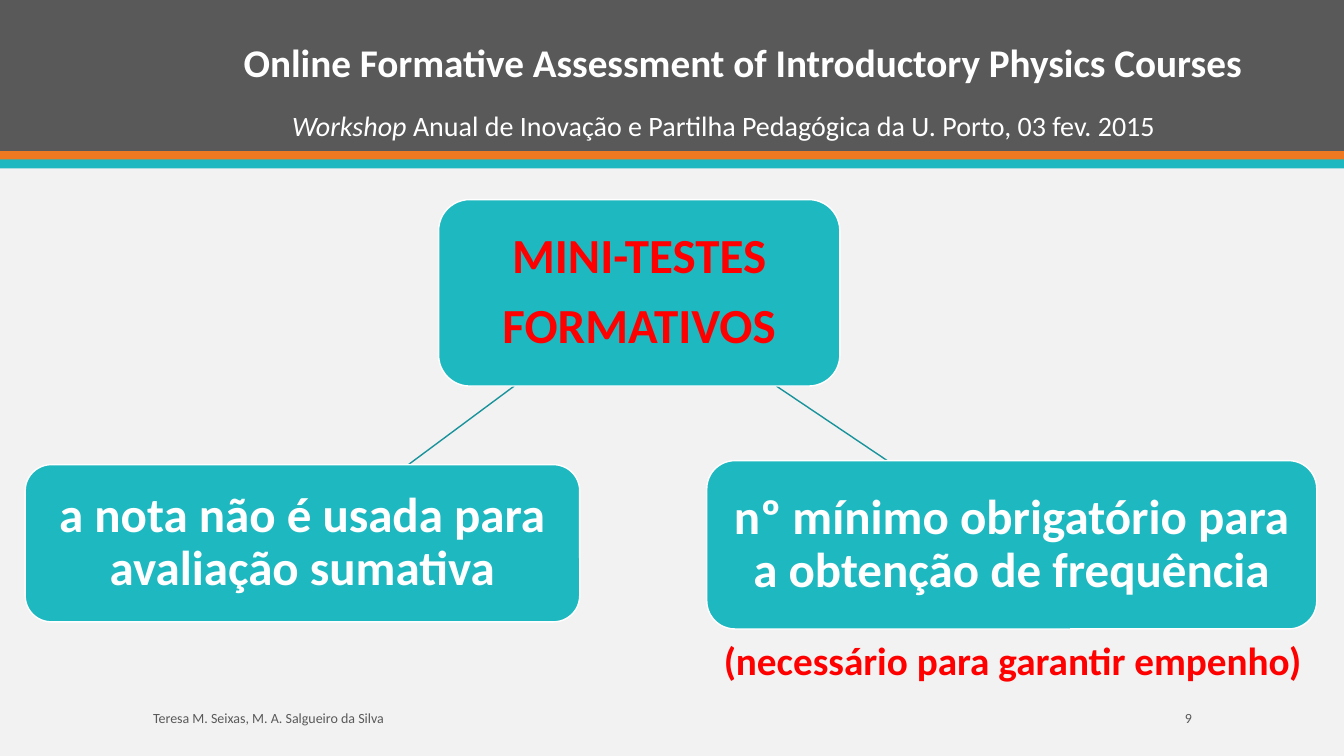
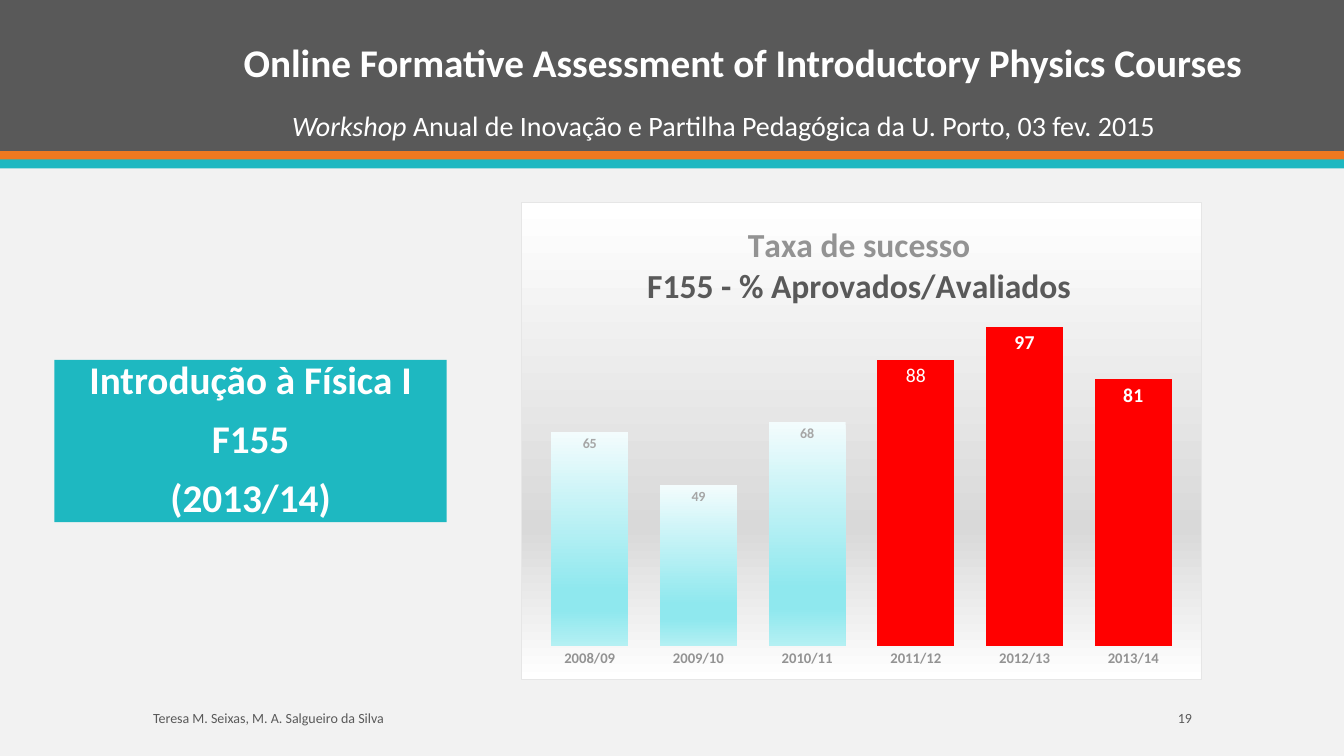
from dataclasses import dataclass

from pptx import Presentation
from pptx.chart.data import CategoryChartData
from pptx.dml.color import RGBColor
from pptx.enum.chart import XL_CHART_TYPE, XL_LABEL_POSITION, XL_TICK_MARK
from pptx.enum.shapes import MSO_CONNECTOR, MSO_SHAPE
from pptx.enum.text import MSO_ANCHOR, PP_ALIGN
from pptx.oxml import parse_xml
from pptx.oxml.ns import nsdecls, qn
from pptx.util import Inches, Pt


@dataclass(frozen=True)
class Theme:
    font: str = "Calibri"
    page: str = "F2F2F2"
    dark: str = "595959"
    orange: str = "EF7920"
    teal: str = "1EB8C1"
    link: str = "18939B"
    white: str = "FFFFFF"
    red: str = "FF0000"
    axis: str = "939393"
    faded: str = "A6A6A6"
    border: str = "E6E6E6"
    panel: tuple = ((0, "FFFFFF"), (68, "D9D9D9"), (100, "FFFFFF"))
    pale_bar: tuple = ((0, "F3FCFD"), (74, "8FE8EE"), (83, "8FE8EE"), (100, "B4F0F3"))
    node: float = 35
    title: float = 28
    chart_title: float = 24
    subtitle: float = 20
    label: float = 14
    category: float = 10.5
    small: float = 10


T = Theme()

TITLE = "Online Formative Assessment of Introductory Physics Courses"
EVENT = ("Workshop", " Anual de Inovação e Partilha Pedagógica da U. Porto, 03 fev. 2015")
AUTHORS = "Teresa M. Seixas, M. A. Salgueiro da Silva"
BANDS = [(0, 1.5, T.dark), (1.5, 0.09, T.orange), (1.58, 0.09, T.teal)]

NODES = [
    ((4.35, 1.98, 3.98, 1.85), ["MINI-TESTES", "FORMATIVOS"], T.red),
    ((0.25, 4.61, 5.5, 1.56), ["a nota não é usada para avaliação sumativa"], T.white),
    ((7.01, 4.57, 6.05, 1.67), ["nº mínimo obrigatório para a obtenção de frequência"], T.white),
]
LINKS = [(5.1, 3.83, 4.05, 4.61), (7.7, 3.83, 8.8, 4.57)]
REMARK = "(necessário para garantir empenho)"

COURSE = ["Introdução à Física I", "F155", "(2013/14)"]
CHART_TITLE = [("Taxa de sucesso", T.axis), ("F155 - % Aprovados/Avaliados", T.dark)]
PASS_RATES = {"2008/09": 65, "2009/10": 49, "2010/11": 68,
              "2011/12": 87, "2012/13": 97, "2013/14": 81}
PALE_YEARS = 3
ROUNDED_LABELS = {3: "88"}


def style(font, size, color, bold=False, italic=False):
    font.name, font.size, font.bold, font.italic = T.font, Pt(size), bold, italic
    font.color.rgb = RGBColor.from_string(color)


def add_run(p, text, size, color, bold=False, italic=False):
    r = p.add_run()
    r.text = text
    style(r.font, size, color, bold, italic)


def write(sp, lines, size, color, bold=False, align=PP_ALIGN.LEFT,
          anchor=MSO_ANCHOR.MIDDLE, spacing=None, gap=0):
    """Fill a shape with one paragraph per line; gap separates paragraphs."""
    tf = sp.text_frame
    tf.word_wrap = True
    tf.vertical_anchor = anchor
    for i, line in enumerate(lines):
        p = tf.add_paragraph() if i else tf.paragraphs[0]
        p.alignment = align
        if spacing:
            p.line_spacing = spacing
        if i:
            p.space_before = Pt(gap)
        add_run(p, line, size, color, bold)


def add_text(s, box, *args, **kwargs):
    sp = s.shapes.add_textbox(*map(Inches, box))
    write(sp, *args, **kwargs)
    return sp


def add_block(s, kind, box, fill, line=None):
    sp = s.shapes.add_shape(kind, *map(Inches, box))
    sp.shadow.inherit = False
    sp.fill.solid()
    sp.fill.fore_color.rgb = RGBColor.from_string(fill)
    if line:
        sp.line.color.rgb = RGBColor.from_string(line)
        sp.line.width = Pt(1)
    else:
        sp.line.fill.background()
    return sp


def add_link(s, ends):
    link = s.shapes.add_connector(MSO_CONNECTOR.STRAIGHT, *map(Inches, ends))
    link.line.color.rgb = RGBColor.from_string(T.link)
    link.line.width = Pt(1)
    link.element.spPr.append(parse_xml(f"<a:effectLst {nsdecls('a')}/>"))


def add_base_slide(prs, number):
    s = prs.slides.add_slide(prs.slide_layouts[6])
    s.background.fill.solid()
    s.background.fill.fore_color.rgb = RGBColor.from_string(T.page)
    for top, height, color in BANDS:
        add_block(s, MSO_SHAPE.RECTANGLE, (0, top, 13.33, height), color)
    add_text(s, (1.44, 0.13, 11.85, 0.77), [TITLE], T.title, T.white, bold=True,
             align=PP_ALIGN.CENTER, anchor=MSO_ANCHOR.BOTTOM, spacing=0.9)
    event = add_text(s, (2.8, 1.03, 9.16, 0.44), [], T.subtitle, T.white,
                     anchor=MSO_ANCHOR.TOP)
    for text, italic in zip(EVENT, (True, False)):
        add_run(event.text_frame.paragraphs[0], text, T.subtitle, T.white, italic=italic)
    add_text(s, (1.42, 6.97, 6.38, 0.3), [AUTHORS], T.small, T.dark)
    add_text(s, (10.42, 6.97, 1.5, 0.3), [str(number)], T.small, T.dark,
             align=PP_ALIGN.RIGHT)
    return s


def gradient_xml(stops):
    """Top-to-bottom gradient from (percent, colour) stops."""
    marks = "".join(f'<a:gs pos="{pos * 1000}"><a:srgbClr val="{color}"/></a:gs>'
                    for pos, color in stops)
    return (f"<a:gradFill {nsdecls('a')}><a:gsLst>{marks}</a:gsLst>"
            '<a:lin ang="5400000" scaled="0"/></a:gradFill>')


def set_layout(parent, index, **fractions):
    """Place a chart part by fractions of the chart area."""
    old = parent.find(qn("c:layout"))
    if old is not None:
        parent.remove(old)
    target = '<c:layoutTarget val="inner"/>' if "w" in fractions else ""
    modes = "".join(f'<c:{k}Mode val="edge"/>' for k in "xy")
    values = "".join(f'<c:{k} val="{v}"/>' for k, v in fractions.items())
    parent.insert(index, parse_xml(
        f"<c:layout {nsdecls('c')}><c:manualLayout>{target}{modes}{values}"
        "</c:manualLayout></c:layout>"))


def style_axes(chart):
    cat = chart.category_axis
    cat.major_tick_mark = XL_TICK_MARK.NONE
    cat.format.line.fill.background()
    style(cat.tick_labels.font, T.category, T.axis, bold=True)
    val = chart.value_axis
    val.minimum_scale, val.maximum_scale, val.major_unit = 0, 100, 20
    val.has_major_gridlines = False
    val.visible = False


def style_bars(chart):
    plot = chart.plots[0]
    plot.gap_width = 41
    plot.vary_by_categories = False
    series = plot.series[0]
    series.format.fill.solid()
    series.format.fill.fore_color.rgb = RGBColor.from_string(T.red)
    labels = series.data_labels
    labels.show_value = True
    labels.position = XL_LABEL_POSITION.INSIDE_END
    style(labels.font, T.small, T.white, bold=True)
    for i in range(len(PASS_RATES)):
        pale = i < PALE_YEARS
        label = series.points[i].data_label
        if i in ROUNDED_LABELS:
            add_run(label.text_frame.paragraphs[0], ROUNDED_LABELS[i], T.label, T.white)
        else:
            style(label.font, T.small if pale else T.label,
                  T.faded if pale else T.white, bold=True)
        label.position = XL_LABEL_POSITION.INSIDE_END
        if pale:
            series.points[i].format.fill.gradient()
    for grad in list(chart.element.iter(qn("a:gradFill"))):
        grad.getparent().replace(grad, parse_xml(gradient_xml(T.pale_bar)))


def add_pass_rate_chart(s):
    data = CategoryChartData()
    data.categories = list(PASS_RATES)
    data.add_series("Taxa de sucesso", list(PASS_RATES.values()))
    chart = s.shapes.add_chart(XL_CHART_TYPE.COLUMN_CLUSTERED,
                               *map(Inches, (5.17, 2, 6.75, 4.75)), data).chart
    style(chart.font, T.small, T.dark)
    chart.has_legend = False
    chart.has_title = True
    tf = chart.chart_title.text_frame
    for i, (text, color) in enumerate(CHART_TITLE):
        p = tf.add_paragraph() if i else tf.paragraphs[0]
        add_run(p, text, T.chart_title, color, bold=True)
    style_axes(chart)
    style_bars(chart)
    area = chart.element.find(qn("c:chart"))
    set_layout(area.find(qn("c:title")), 1, x=0.18, y=0.04)
    set_layout(area.find(qn("c:plotArea")), 0, x=0.02, y=0.24, w=0.96, h=0.69)
    area.addnext(parse_xml(
        f"<c:spPr {nsdecls('c', 'a')}>{gradient_xml(T.panel)}"
        f'<a:ln w="{Pt(0.75)}"><a:solidFill><a:srgbClr val="{T.border}"/></a:solidFill></a:ln>'
        "</c:spPr>"))


def build_tests_slide(prs):
    s = add_base_slide(prs, 9)
    for ends in LINKS:
        add_link(s, ends)
    for box, lines, color in NODES:
        sp = add_block(s, MSO_SHAPE.ROUNDED_RECTANGLE, box, T.teal, T.white)
        write(sp, lines, T.node, color, bold=True, align=PP_ALIGN.CENTER,
              spacing=0.9, gap=12)
    add_text(s, (7.08, 6.26, 6.11, 0.57), [REMARK], T.title, T.red, bold=True,
             anchor=MSO_ANCHOR.TOP)


def build_results_slide(prs):
    s = add_base_slide(prs, 19)
    add_pass_rate_chart(s)
    sp = add_block(s, MSO_SHAPE.RECTANGLE, (0.54, 3.57, 3.89, 1.61), T.teal)
    write(sp, COURSE, T.title, T.white, bold=True, align=PP_ALIGN.CENTER,
          spacing=0.9, gap=12)


def main():
    prs = Presentation()
    prs.slide_width, prs.slide_height = Inches(13.33), Inches(7.5)
    build_tests_slide(prs)
    build_results_slide(prs)
    prs.save("out.pptx")


if __name__ == "__main__":
    main()
